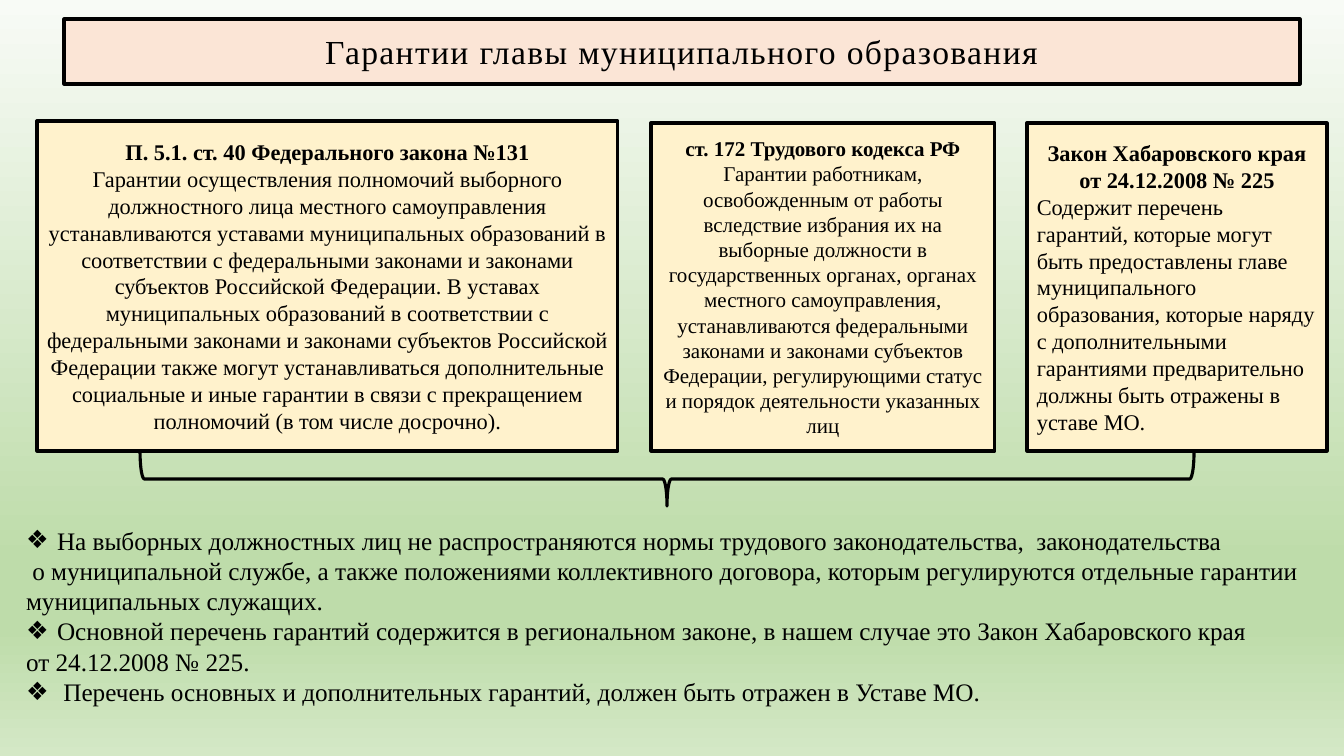
import pptx
import pptx.util
import pptx.dml.color
import pptx.enum.shapes
import pptx.enum.text
import pptx.oxml
import pptx.oxml.ns

COLORS = {
    "ink": "000000",
    "title": "FBE5D6",
    "card": "FFF2CC",
    "sky": "F8FBF6",
    "meadow": "BEDCAA",
    "haze": "D4E8C6",
}
ALIGN = pptx.enum.text.PP_ALIGN
ANCHOR = pptx.enum.text.MSO_ANCHOR
SHAPE = pptx.enum.shapes.MSO_SHAPE
EMU_PER_PX = 914400 / 100.8


def px(length):
    return pptx.util.Emu(round(length * EMU_PER_PX))


def rgb(name):
    return pptx.dml.color.RGBColor.from_string(COLORS[name])


class GuaranteeSlide:
    font_name = "Times New Roman"
    line_width = pptx.util.Pt(2.25)
    bullet_indent = 31

    def __init__(self, presentation):
        self.slide = presentation.slides.add_slide(presentation.slide_layouts[1])

    def background(self, stops):
        fill = self.slide.background.fill
        fill.gradient()
        fill.gradient_angle = 270
        stop_list = self.slide.element.find(".//" + pptx.oxml.ns.qn("a:gsLst"))
        for old_stop in list(stop_list):
            stop_list.remove(old_stop)
        for percent, color in stops:
            stop_list.append(pptx.oxml.parse_xml(
                f'<a:gs {pptx.oxml.ns.nsdecls("a")} pos="{percent * 1000}">'
                f'<a:srgbClr val="{COLORS[color]}"/></a:gs>'))

    def place(self, holder, left, top, width, height):
        holder.left, holder.top = px(left), px(top)
        holder.width, holder.height = px(width), px(height)

    def outline(self, shape, fill=None):
        if fill:
            shape.fill.solid()
            shape.fill.fore_color.rgb = rgb(fill)
        else:
            shape.fill.background()
        shape.line.color.rgb = rgb("ink")
        shape.line.width = self.line_width

    def frame(self, shape, anchor):
        frame = shape.text_frame
        frame.word_wrap = True
        frame.auto_size = pptx.enum.text.MSO_AUTO_SIZE.NONE
        frame.vertical_anchor = anchor
        return frame

    def format(self, paragraph, size, align, bold=False):
        paragraph.alignment = align
        paragraph.space_before = pptx.util.Pt(0)
        paragraph.font.name = self.font_name
        paragraph.font.size = pptx.util.Pt(size)
        paragraph.font.bold = bold
        paragraph.font.color.rgb = rgb("ink")

    def title(self, text, box):
        heading = self.slide.shapes.title
        self.place(heading, *box)
        self.outline(heading, "title")
        frame = self.frame(heading, ANCHOR.MIDDLE)
        frame.text = text
        self.format(frame.paragraphs[0], 24, ALIGN.CENTER)
        for run in frame.paragraphs[0].runs:
            run.font.bold = False
            run.font._element.set("spc", "100")

    def card(self, law, summary, size, summary_align, box):
        card = self.slide.shapes.add_shape(SHAPE.RECTANGLE, *map(px, box))
        card.shadow.inherit = False
        self.outline(card, "card")
        frame = self.frame(card, ANCHOR.MIDDLE)
        frame.text = f"{law}\n{summary}"
        law_line, summary_line = frame.paragraphs
        self.format(law_line, size, ALIGN.CENTER, bold=True)
        self.format(summary_line, size, summary_align)

    def brace(self, box):
        brace = self.slide.shapes.add_shape(SHAPE.RIGHT_BRACE, *map(px, box))
        brace.shadow.inherit = False
        self.outline(brace)
        brace.adjustments[0] = 0.08
        brace.adjustments[1] = 0.5
        brace.rotation = 270
        brace.element.spPr.find(pptx.oxml.ns.qn("a:xfrm")).set("flipH", "1")

    def conclusions(self, lines, box):
        body = self.slide.placeholders[1]
        self.place(body, *box)
        frame = self.frame(body, ANCHOR.TOP)
        frame.text = "\n".join(text for text, _ in lines)
        for paragraph, (_, bulleted) in zip(frame.paragraphs, lines):
            self.format(paragraph, 18, ALIGN.JUSTIFY)
            self.bullet(paragraph, bulleted)

    def bullet(self, paragraph, shown):
        indent = px(self.bullet_indent) if shown else 0
        properties = paragraph._p.get_or_add_pPr()
        properties.set("marL", str(indent))
        properties.set("indent", str(-indent))
        tag = 'buChar char="❖"' if shown else "buNone"
        mark = pptx.oxml.parse_xml(f'<a:{tag} {pptx.oxml.ns.nsdecls("a")}/>')
        properties.find(pptx.oxml.ns.qn("a:defRPr")).addprevious(mark)


def main():
    presentation = pptx.Presentation()
    presentation.slide_width, presentation.slide_height = px(1344), px(756)
    page = GuaranteeSlide(presentation)
    page.background([(0, "sky"), (74, "meadow"), (83, "meadow"), (100, "haze")])
    page.title("Гарантии главы муниципального образования", (64, 19, 1236, 65))
    page.card(
        "П. 5.1. ст. 40 Федерального закона №131",
        "Гарантии осуществления полномочий выборного должностного лица местного "
        "самоуправления устанавливаются уставами муниципальных образований в "
        "соответствии с федеральными законами и законами субъектов Российской "
        "Федерации. В уставах муниципальных образований в соответствии с "
        "федеральными законами и законами субъектов Российской Федерации также "
        "могут устанавливаться дополнительные социальные и иные гарантии в связи "
        "с прекращением полномочий (в том числе досрочно).",
        16, ALIGN.CENTER, (37, 121, 581, 330))
    page.card(
        "ст. 172 Трудового кодекса РФ",
        "Гарантии работникам, освобожденным от работы вследствие избрания их на "
        "выборные должности в государственных органах, органах местного "
        "самоуправления, устанавливаются федеральными законами и законами "
        "субъектов Федерации, регулирующими статус и порядок деятельности "
        "указанных лиц",
        15, ALIGN.CENTER, (651, 123, 344, 328))
    page.card(
        "Закон Хабаровского края от 24.12.2008 № 225",
        "Содержит перечень гарантий, которые могут быть предоставлены главе "
        "муниципального образования, которые наряду с дополнительными гарантиями "
        "предварительно должны быть отражены в уставе МО.",
        16, ALIGN.LEFT, (1027, 123, 300, 328))
    page.brace((640, -48, 54, 1054))
    page.conclusions([
        ("На выборных должностных лиц не распространяются нормы трудового "
         "законодательства,  законодательства", True),
        (" о муниципальной службе, а также положениями коллективного договора, "
         "которым регулируются отдельные гарантии", False),
        ("муниципальных служащих.", False),
        ("Основной перечень гарантий содержится в региональном законе, в нашем "
         "случае это Закон Хабаровского края", True),
        ("от 24.12.2008 № 225.", False),
        (" Перечень основных и дополнительных гарантий, должен быть отражен в "
         "Уставе МО.", True),
    ], (16, 520, 1311, 224))
    presentation.save("out.pptx")


if __name__ == "__main__":
    main()
